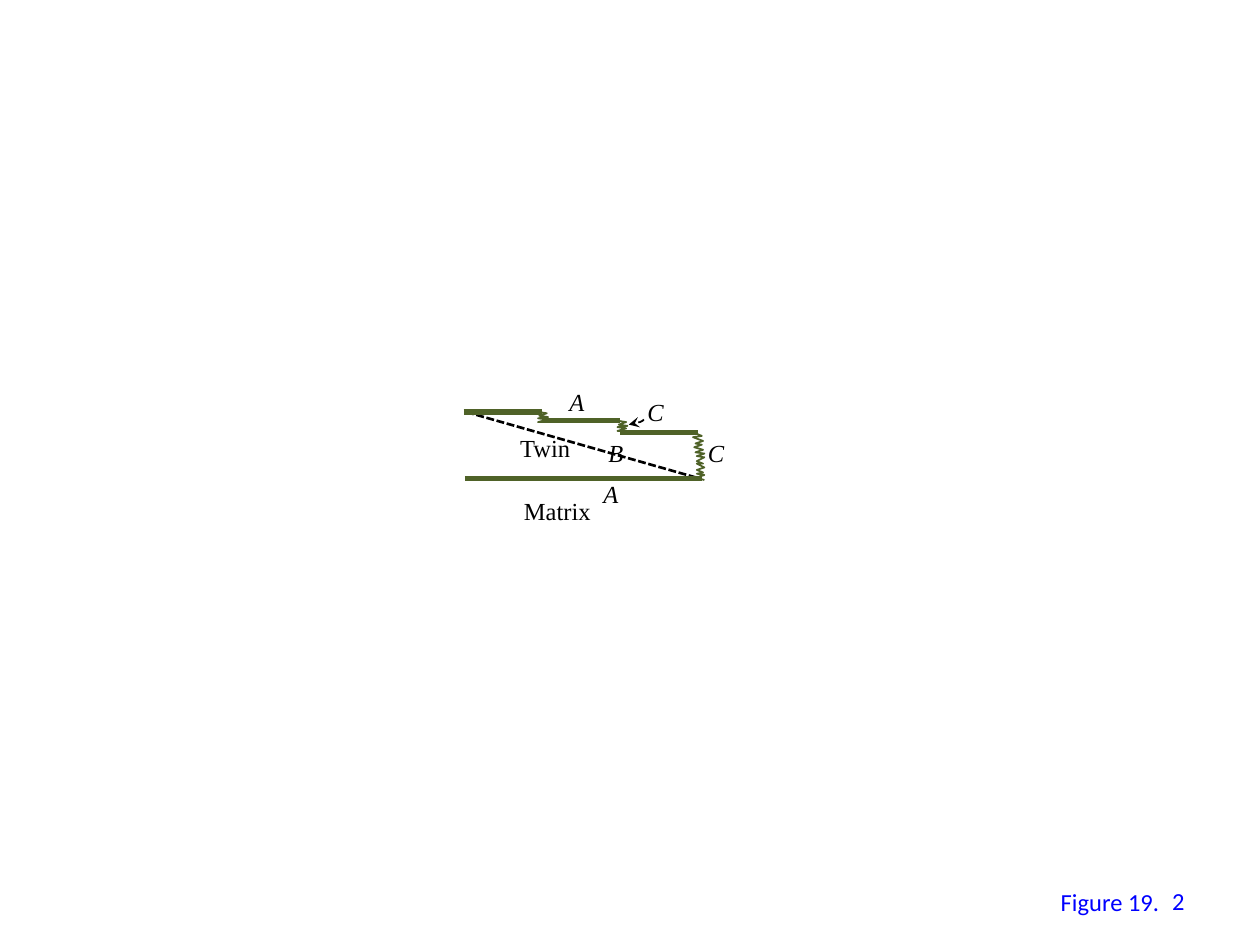
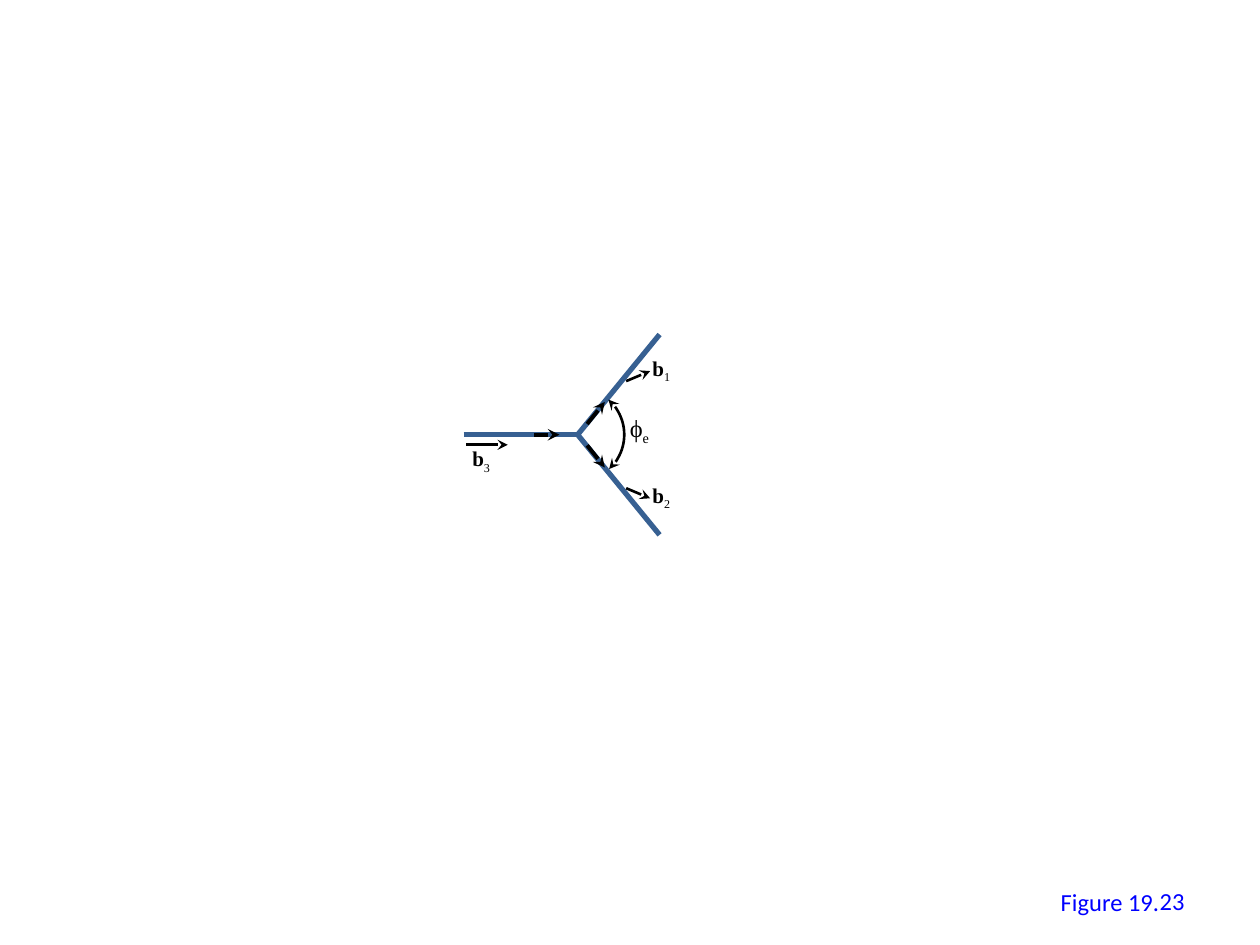
from lxml.etree import SubElement
from pptx import Presentation
from pptx.dml.color import RGBColor
from pptx.enum.dml import MSO_LINE
from pptx.enum.shapes import MSO_CONNECTOR, MSO_SHAPE
from pptx.enum.text import MSO_ANCHOR, MSO_AUTO_SIZE, PP_ALIGN
from pptx.oxml.ns import qn
from pptx.util import Inches, Pt

WIDTH, HEIGHT = 10, 7.5
BLACK, BLUE, GREEN, STEEL = "000000", "0000FF", "4F6228", "376092"
SERIF, SANS = "Times New Roman", "Calibri"
THICK, ARROW, THIN, FINE = 3, 2.25, 1.5, 1

FIGURE_PREFIX = "Figure 19."
FIGURE_NUMBERS = ["2", "23"]

LEDGE_LEFT, LEDGE_LENGTH = 3.68, 0.62
LEDGE_HEIGHTS = [3.27, 3.34, 3.435]
MATRIX_LEVEL, TIP_X = 3.8, 5.57
RISERS = [(4.28, 3.27), (4.91, 3.34)]
RISER_STEPS = [(0, 0), (0.06, 0.01), (0, 0.03), (0.07, 0.04), (-0.01, 0.05),
               (0.06, 0.06), (-0.01, 0.08), (0.06, 0.08)]
END_RISER = [(5.5, 3.43), (5.57, 3.46), (5.5, 3.47), (5.58, 3.5), (5.52, 3.52),
             (5.57, 3.53), (5.51, 3.55), (5.58, 3.57), (5.52, 3.59), (5.59, 3.6),
             (5.53, 3.62), (5.59, 3.63), (5.53, 3.66), (5.58, 3.68), (5.53, 3.68),
             (5.59, 3.71), (5.53, 3.73), (5.58, 3.75), (5.53, 3.76), (5.59, 3.77),
             (5.53, 3.79), (5.59, 3.81)]
POINTER = [(4.99, 3.37), (5.03, 3.36), (5.08, 3.35), (5.1, 3.34), (5.11, 3.33)]
INTERFACE_LABELS = [("A", 4.42, 3.02, 0.37), ("A", 4.69, 3.75, 0.37),
                    ("C", 5.52, 3.43, 0.39), ("C", 5.04, 3.1, 0.39),
                    ("B", 4.73, 3.43, 0.37)]
REGION_LABELS = [("Matrix", 4.06, 3.89, 0.74), ("Twin", 4.03, 3.39, 0.61)]

JUNCTION = (4.585, 3.45)
ARM = (0.65, 0.795)
SENSE_START, SENSE_END = (0.075, 0.085), (0.215, 0.26)
BURGERS_START, BURGERS_END = (0.385, 0.425), (0.575, 0.505)
ARC_RADIUS, ARC_START, ARC_END = 0.37, 311.33, 47.5
BURGERS_LABELS = [("3", 3.65, 3.49), ("2", 5.08, 3.78), ("1", 5.08, 2.77)]


def color(hex_text):
    return RGBColor.from_string(hex_text)


def style_line(shape, hex_text, weight, head=False, tail=False):
    shape.line.color.rgb = color(hex_text)
    shape.line.width = Pt(weight)
    outline = shape.get_or_add_ln()
    for tag, wanted in (("a:headEnd", head), ("a:tailEnd", tail)):
        if wanted:
            SubElement(outline, qn(tag), type="stealth")


def add_line(slide, start, end, hex_text, weight, tail=False):
    points = [Inches(value) for value in (*start, *end)]
    connector = slide.shapes.add_connector(MSO_CONNECTOR.STRAIGHT, *points)
    style_line(connector, hex_text, weight, tail=tail)
    SubElement(connector._element.spPr, qn("a:effectLst"))
    return connector


def add_path(slide, points, hex_text, head=False):
    corners = [(Inches(x), Inches(y)) for x, y in points]
    builder = slide.shapes.build_freeform(*corners[0])
    builder.add_line_segments(corners[1:], close=False)
    shape = builder.convert_to_shape()
    shape.fill.background()
    shape.shadow.inherit = False
    style_line(shape, hex_text, FINE, head=head)


def add_run(paragraph, text, size=14, font=SERIF, hex_text=BLACK,
            bold=False, italic=False, subscript=False):
    run = paragraph.add_run()
    run.text = text
    run.font.name = font
    run.font.size = Pt(size)
    run.font.bold = bold
    run.font.italic = italic
    run.font.color.rgb = color(hex_text)
    if subscript:
        run._r.get_or_add_rPr().set("baseline", "-25000")


def add_label(slide, left, top, width, height=0.34):
    box = slide.shapes.add_textbox(*map(Inches, (left, top, width, height)))
    box.text_frame.word_wrap = False
    box.text_frame.auto_size = MSO_AUTO_SIZE.SHAPE_TO_FIT_TEXT
    return box.text_frame.paragraphs[0]


def add_footer(slide, number):
    add_run(add_label(slide, 8.32, 6.99, 0.99), FIGURE_PREFIX, font=SANS, hex_text=BLUE)
    box = slide.shapes.add_textbox(*map(Inches, (7.17, 6.95, 2.33, 0.4)))
    box.text_frame.word_wrap = True
    box.text_frame.vertical_anchor = MSO_ANCHOR.MIDDLE
    paragraph = box.text_frame.paragraphs[0]
    paragraph.alignment = PP_ALIGN.RIGHT
    add_run(paragraph, number, font=SANS, hex_text=BLUE)


def draw_twin(slide):
    boundary = add_line(slide, (3.7, LEDGE_HEIGHTS[0]), (5.56, MATRIX_LEVEL), BLACK, THIN)
    boundary.line.dash_style = MSO_LINE.SQUARE_DOT
    add_line(slide, (3.69, MATRIX_LEVEL), (TIP_X, MATRIX_LEVEL), GREEN, THICK)
    for index, level in enumerate(LEDGE_HEIGHTS):
        left = LEDGE_LEFT + index * LEDGE_LENGTH
        add_line(slide, (left, level), (left + LEDGE_LENGTH, level), GREEN, THICK)
    add_path(slide, END_RISER, GREEN)
    for x, y in RISERS:
        add_path(slide, [(x + dx, y + dy) for dx, dy in RISER_STEPS], GREEN)
    add_path(slide, POINTER, BLACK, head=True)
    for text, *place in INTERFACE_LABELS:
        add_run(add_label(slide, *place), text, italic=True)
    for text, *place in REGION_LABELS:
        add_run(add_label(slide, *place), text)


def draw_junction(slide):
    x, y = JUNCTION

    def along(offset, side):
        return x + offset[0], y + side * offset[1]

    sides = (-1, 1)
    add_line(slide, (3.68, y), JUNCTION, STEEL, THICK)
    for side in sides:
        add_line(slide, JUNCTION, along(ARM, side), STEEL, THICK)
    for side in sides:
        add_line(slide, along(SENSE_START, side), along(SENSE_END, side), BLACK, ARROW, True)
        add_line(slide, along(BURGERS_START, side), along(BURGERS_END, side), BLACK, THIN, True)
    add_line(slide, (4.24, y), (4.44, y), BLACK, ARROW, True)
    add_line(slide, (3.7, 3.53), (4.03, 3.53), BLACK, THIN, True)

    square = (x - ARC_RADIUS, y - ARC_RADIUS, 2 * ARC_RADIUS, 2 * ARC_RADIUS)
    arc = slide.shapes.add_shape(MSO_SHAPE.ARC, *map(Inches, square))
    arc.adjustments[0] = ARC_START * 0.6
    arc.adjustments[1] = ARC_END * 0.6
    arc.fill.background()
    arc.shadow.inherit = False
    style_line(arc, BLACK, THIN, head=True, tail=True)

    for index, left, top in BURGERS_LABELS:
        paragraph = add_label(slide, left, top, 0.36, 0.3)
        add_run(paragraph, "b", size=12, bold=True)
        add_run(paragraph, index, size=12, subscript=True)
    angle = add_label(slide, 4.9, 3.23, 0.36)
    add_run(angle, "ϕ")
    add_run(angle, "e", subscript=True)


def main():
    presentation = Presentation()
    presentation.slide_width = Inches(WIDTH)
    presentation.slide_height = Inches(HEIGHT)
    for number, draw in zip(FIGURE_NUMBERS, (draw_twin, draw_junction)):
        slide = presentation.slides.add_slide(presentation.slide_layouts[6])
        draw(slide)
        add_footer(slide, number)
    presentation.save("out.pptx")


if __name__ == "__main__":
    main()
